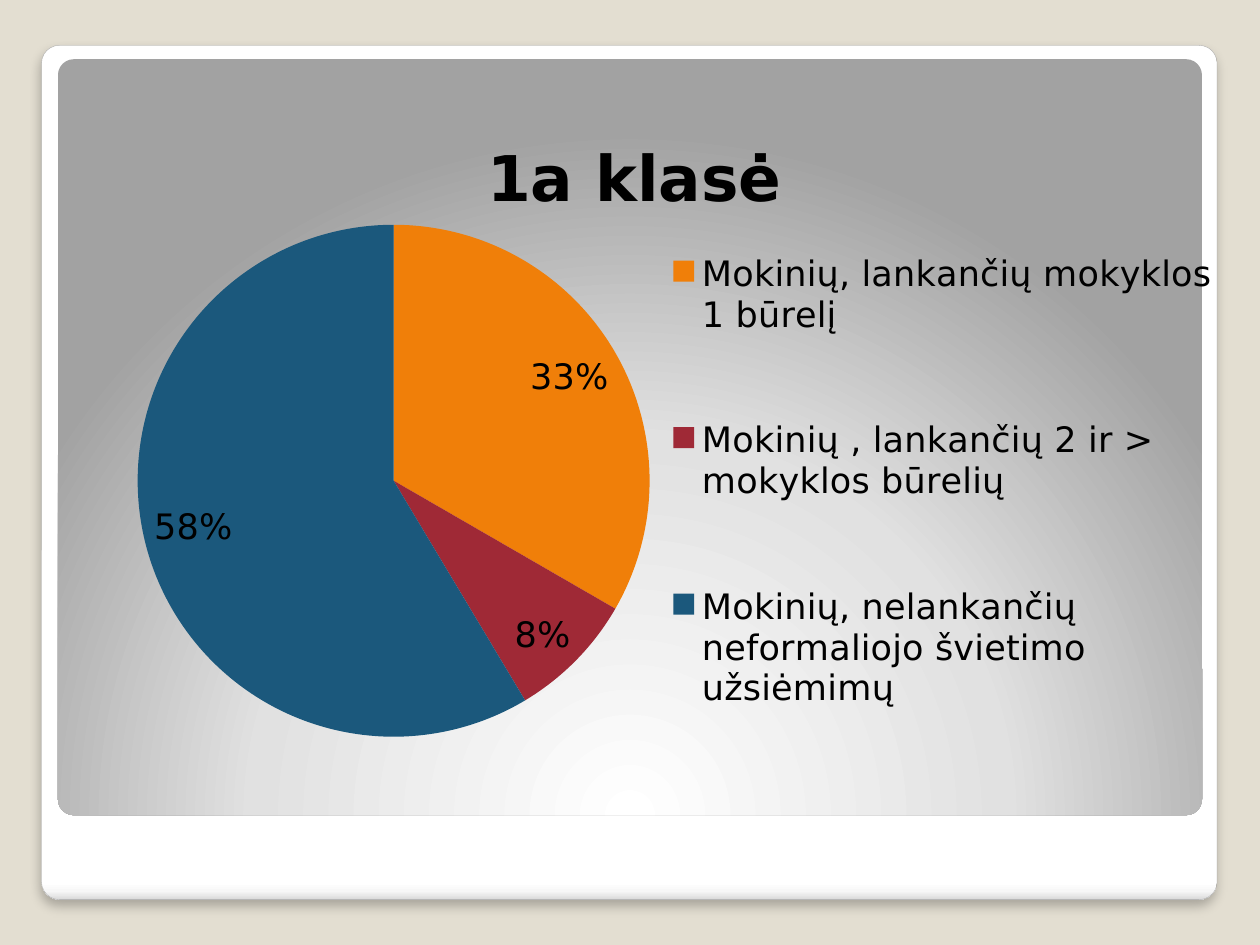
import pptx
import pptx.chart.data
import pptx.dml.color
import pptx.enum.chart
import pptx.enum.shapes
import pptx.oxml
import pptx.oxml.ns
import pptx.util
from lxml import etree

Inches = pptx.util.Inches
Pt = pptx.util.Pt
qn = pptx.oxml.ns.qn

FONT = "DejaVu Sans"
COLORS = {"background": "E3DED1", "text": "000000", "border": "A4A4A4", "shadow": "000000"}
CLASS_TITLE = "1a klasė"
PUPIL_GROUPS = [
    ("Mokinių, lankančių mokyklos 1 būrelį", 33, "F07F09"),
    ("Mokinių , lankančių 2 ir > mokyklos būrelių", 8, "9F2936"),
    ("Mokinių, nelankančių neformaliojo švietimo užsiėmimų", 58, "1B587C"),
]
FRAME = {
    "box": (0.33, 0.36, 9.33, 6.78),
    "stops": [(0, "FFFFFF"), (98, "FFFFFF"), (99, "F7F7F7"), (100, "DADADA")],
    "direction": '<a:lin ang="5400000" scaled="0"/>',
}
PANEL = {
    "box": (0.46, 0.47, 9.08, 6),
    "stops": [(0, "FFFFFF"), (55, "E1E1E1"), (100, "A2A2A2")],
    "direction": '<a:path path="circle"><a:fillToRect l="50000" t="175000" '
                 'r="50000" b="-75000"/></a:path>',
}
CHART_BOX = (0.28, 0.68, 9.45, 5.98)
TITLE_LAYOUT = {"x": 0.37, "y": 0.05}
PIE_LAYOUT = {"x": 0.086, "y": 0.134, "w": 0.43, "h": 0.781}
LEGEND_LAYOUT = {"x": 0.53, "y": 0.11, "w": 0.47, "h": 0.83}


def rgb(hex_color):
    return pptx.dml.color.RGBColor.from_string(hex_color)


def style_font(font, size, bold=False):
    font.name = FONT
    font.size = Pt(size)
    font.bold = bold
    font.color.rgb = rgb(COLORS["text"])


def write_text(frame, text, **style):
    frame.text = text
    style_font(frame.paragraphs[0].runs[0].font, **style)


def add_card(slide, box, stops, direction):
    card = slide.shapes.add_shape(pptx.enum.shapes.MSO_SHAPE.ROUNDED_RECTANGLE, *map(Inches, box))
    card.adjustments[0] = 0.021
    card.shadow.inherit = False
    card.line.fill.background()
    card.fill.gradient()
    stop_xml = "".join(
        f'<a:gs pos="{position * 1000}"><a:srgbClr val="{color}"/></a:gs>'
        for position, color in stops
    )
    gradient = pptx.oxml.parse_xml(
        f'<a:gradFill {pptx.oxml.ns.nsdecls("a")} rotWithShape="1">'
        f"<a:gsLst>{stop_xml}</a:gsLst>{direction}</a:gradFill>"
    )
    properties = card._element.spPr
    properties.replace(properties.find(qn("a:gradFill")), gradient)
    return card


def add_border_and_shadow(card):
    card.line.color.rgb = rgb(COLORS["border"])
    card.line.width = Pt(0.16)
    effects = card._element.spPr.find(qn("a:effectLst"))
    shadow = etree.SubElement(
        effects, qn("a:outerShdw"), blurRad=str(Pt(6)), dist=str(Pt(4)),
        dir="5400000", algn="tl", rotWithShape="0",
    )
    color = etree.SubElement(shadow, qn("a:srgbClr"), val=COLORS["shadow"])
    etree.SubElement(color, qn("a:alpha"), val="25000")


def set_layout(element, position, before, inner=False):
    for existing in element.findall(qn("c:layout")):
        element.remove(existing)
    layout = etree.Element(qn("c:layout"))
    manual = etree.SubElement(layout, qn("c:manualLayout"))
    if inner:
        etree.SubElement(manual, qn("c:layoutTarget"), val="inner")
    for axis in "xy":
        etree.SubElement(manual, qn(f"c:{axis}Mode"), val="edge")
    for key, share in position.items():
        etree.SubElement(manual, qn(f"c:{key}"), val=str(share))
    element.find(qn(before)).addprevious(layout)


def add_pie(slide):
    pupils = pptx.chart.data.CategoryChartData(number_format='0"%"')
    pupils.categories = [name for name, _, _ in PUPIL_GROUPS]
    pupils.add_series("Series 1", [share for _, share, _ in PUPIL_GROUPS])
    chart = slide.shapes.add_chart(
        pptx.enum.chart.XL_CHART_TYPE.PIE, *map(Inches, CHART_BOX), pupils
    ).chart
    style_font(chart.font, 10)

    chart.has_title = True
    write_text(chart.chart_title.text_frame, CLASS_TITLE, size=36, bold=True)
    chart.chart_title.include_in_layout = False
    set_layout(chart.chart_title._element, TITLE_LAYOUT, "c:overlay")

    chart.has_legend = True
    chart.legend.position = pptx.enum.chart.XL_LEGEND_POSITION.RIGHT
    chart.legend.include_in_layout = False
    style_font(chart.legend.font, 20)
    set_layout(chart.legend._element, LEGEND_LAYOUT, "c:overlay")

    pie = chart.plots[0]
    pie.vary_by_categories = True
    set_layout(pie._element.getparent(), PIE_LAYOUT, "c:pieChart", inner=True)
    for index, (_, _, color) in enumerate(PUPIL_GROUPS):
        slice_fill = pie.series[0].points[index].format.fill
        slice_fill.solid()
        slice_fill.fore_color.rgb = rgb(color)

    labels = pie.series[0].data_labels
    labels.show_value = True
    labels.number_format = '0"%"'
    labels.number_format_is_linked = False
    labels.position = pptx.enum.chart.XL_LABEL_POSITION.INSIDE_END
    style_font(labels.font, 20)


def main():
    """Build the slide with the pie chart of class 1a."""
    deck = pptx.Presentation()
    deck.slide_width, deck.slide_height = Inches(10), Inches(7.5)
    slide = deck.slides.add_slide(deck.slide_layouts[6])
    slide.background.fill.solid()
    slide.background.fill.fore_color.rgb = rgb(COLORS["background"])
    add_border_and_shadow(add_card(slide, **FRAME))
    add_card(slide, **PANEL)
    add_pie(slide)
    deck.save("out.pptx")


if __name__ == "__main__":
    main()
